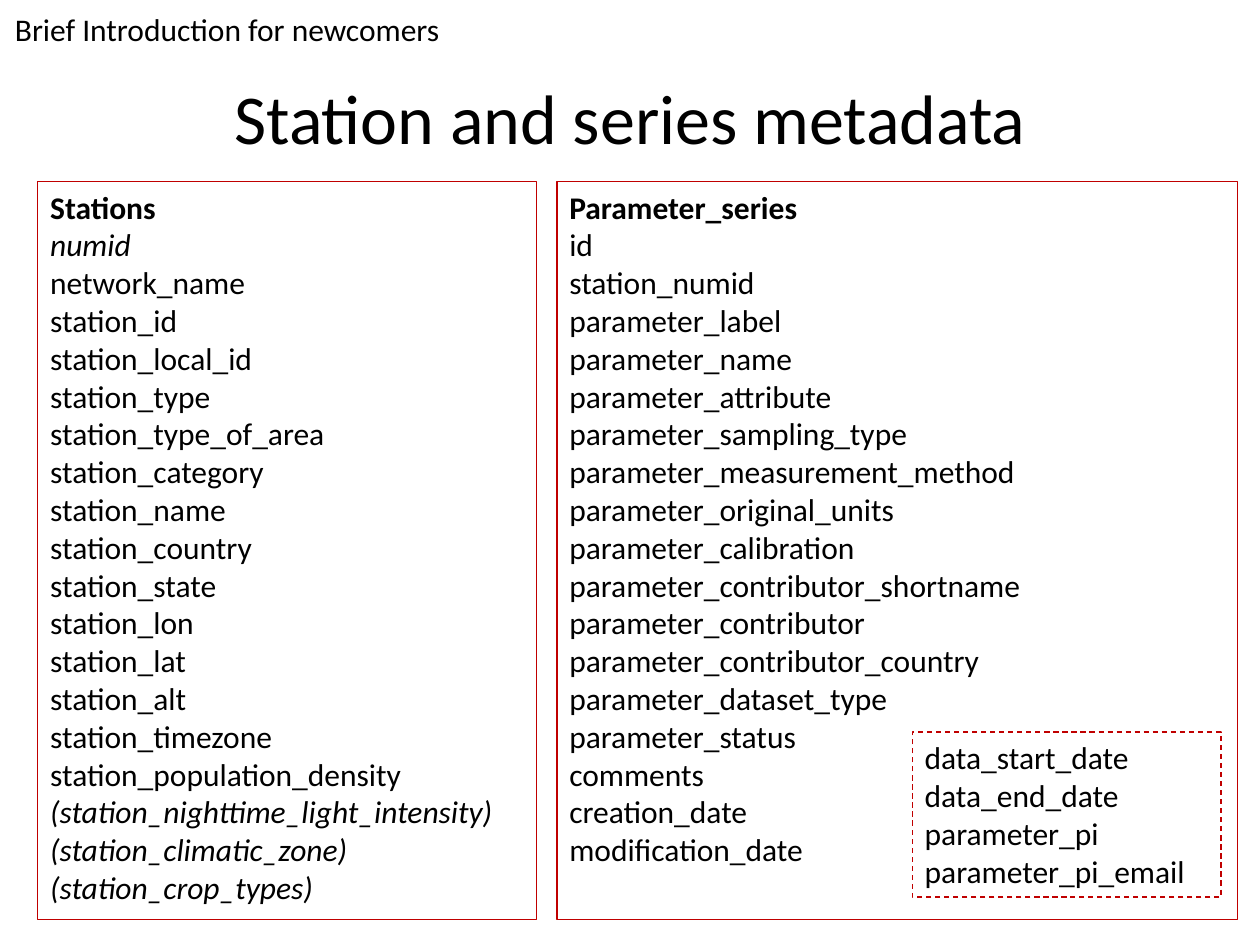
from dataclasses import dataclass

from pptx import Presentation
from pptx.dml.color import RGBColor
from pptx.enum.dml import MSO_LINE_DASH_STYLE as Dash
from pptx.enum.text import MSO_ANCHOR as Anchor, MSO_AUTO_SIZE as AutoSize, PP_ALIGN as Align
from pptx.util import Inches, Pt


@dataclass(frozen=True)
class Theme:
    font: str = "Calibri"
    text: RGBColor = RGBColor(0x00, 0x00, 0x00)
    border: RGBColor = RGBColor(0xC0, 0x00, 0x00)
    title_size: int = 40
    body_size: int = 18
    border_width: float = 0.75


THEME = Theme()

STATION_FIELDS = [
    "network_name", "station_id", "station_local_id", "station_type",
    "station_type_of_area", "station_category", "station_name",
    "station_country", "station_state", "station_lon", "station_lat",
    "station_alt", "station_timezone", "station_population_density",
]
STATION_EXTRAS = [
    "(station_nighttime_light_intensity)", "(station_climatic_zone)",
    "(station_crop_types)",
]
SERIES_FIELDS = [
    "id", "station_numid", "parameter_label", "parameter_name",
    "parameter_attribute", "parameter_sampling_type",
    "parameter_measurement_method", "parameter_original_units",
    "parameter_calibration", "parameter_contributor_shortname",
    "parameter_contributor", "parameter_contributor_country",
    "parameter_dataset_type", "parameter_status", "comments",
    "creation_date", "modification_date",
]
DATE_AND_PI_FIELDS = [
    "data_start_date", "data_end_date", "parameter_pi", "parameter_pi_email",
]


def add_run(p, text, size=THEME.body_size, bold=False, italic=False):
    r = p.add_run()
    r.text = text
    r.font.name = THEME.font
    r.font.size = Pt(size)
    r.font.bold = bold
    r.font.italic = italic
    r.font.color.rgb = THEME.text


def add_title(s, text):
    title = s.shapes.title
    title.left, title.top = Inches(0.5), Inches(0.3)
    title.width, title.height = Inches(9), Inches(1.25)
    tf = title.text_frame
    tf.vertical_anchor = Anchor.MIDDLE
    p = tf.paragraphs[0]
    p.alignment = Align.CENTER
    add_run(p, text, THEME.title_size)


def add_text(s, box, lines, wrap=True):
    """Add a text box with one paragraph per (text, style) pair."""
    sp = s.shapes.add_textbox(*(Inches(v) for v in box))
    tf = sp.text_frame
    tf.word_wrap = wrap
    tf.auto_size = AutoSize.SHAPE_TO_FIT_TEXT
    for i, (text, style) in enumerate(lines):
        p = tf.paragraphs[0] if i == 0 else tf.add_paragraph()
        add_run(p, text, **style)
    return sp


def add_panel(s, box, lines, dash=None):
    sp = add_text(s, box, lines)
    sp.line.color.rgb = THEME.border
    sp.line.width = Pt(THEME.border_width)
    if dash:
        sp.line.dash_style = dash


def styled(texts, **style):
    return [(text, style) for text in texts]


def main():
    prs = Presentation()
    prs.slide_width, prs.slide_height = Inches(10), Inches(7.5)
    s = prs.slides.add_slide(prs.slide_layouts[5])

    # Heading and section label
    add_title(s, "Station and series metadata")
    add_text(s, (0.02, 0.03, 3.61, 0.4),
             styled(["Brief Introduction for newcomers"]), wrap=False)

    # Station fields, optional ones in italics
    add_panel(s, (0.3, 1.44, 3.96, 5.86),
              styled(["Stations"], bold=True)
              + styled(["numid"], italic=True)
              + styled(STATION_FIELDS)
              + styled(STATION_EXTRAS, italic=True))

    # Series fields
    add_panel(s, (4.42, 1.44, 5.4, 5.86),
              styled(["Parameter_series"], bold=True) + styled(SERIES_FIELDS))

    # Dates and principal investigator
    add_panel(s, (7.24, 5.81, 2.45, 1.31),
              styled(DATE_AND_PI_FIELDS), dash=Dash.DASH)

    prs.save("out.pptx")


if __name__ == "__main__":
    main()
